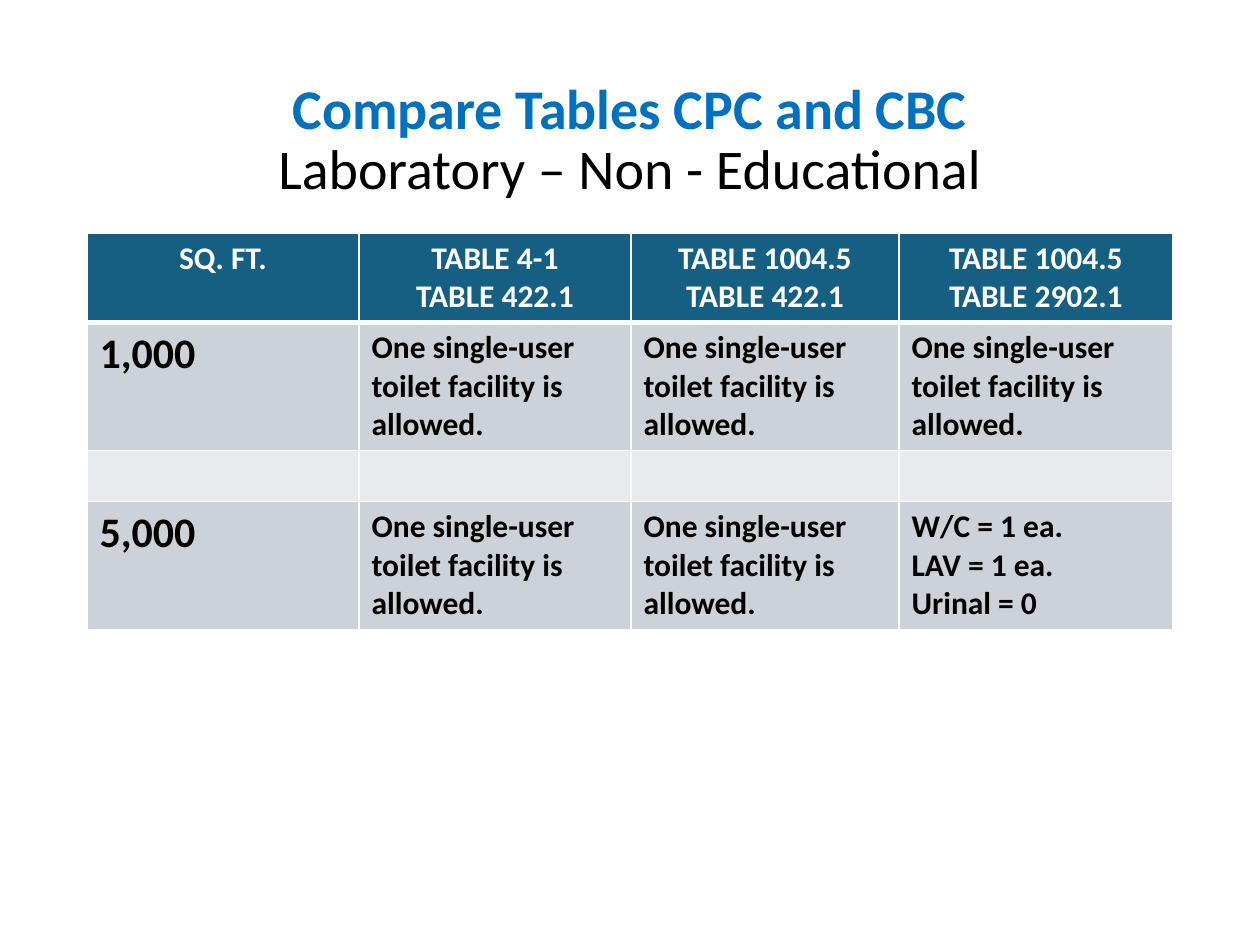
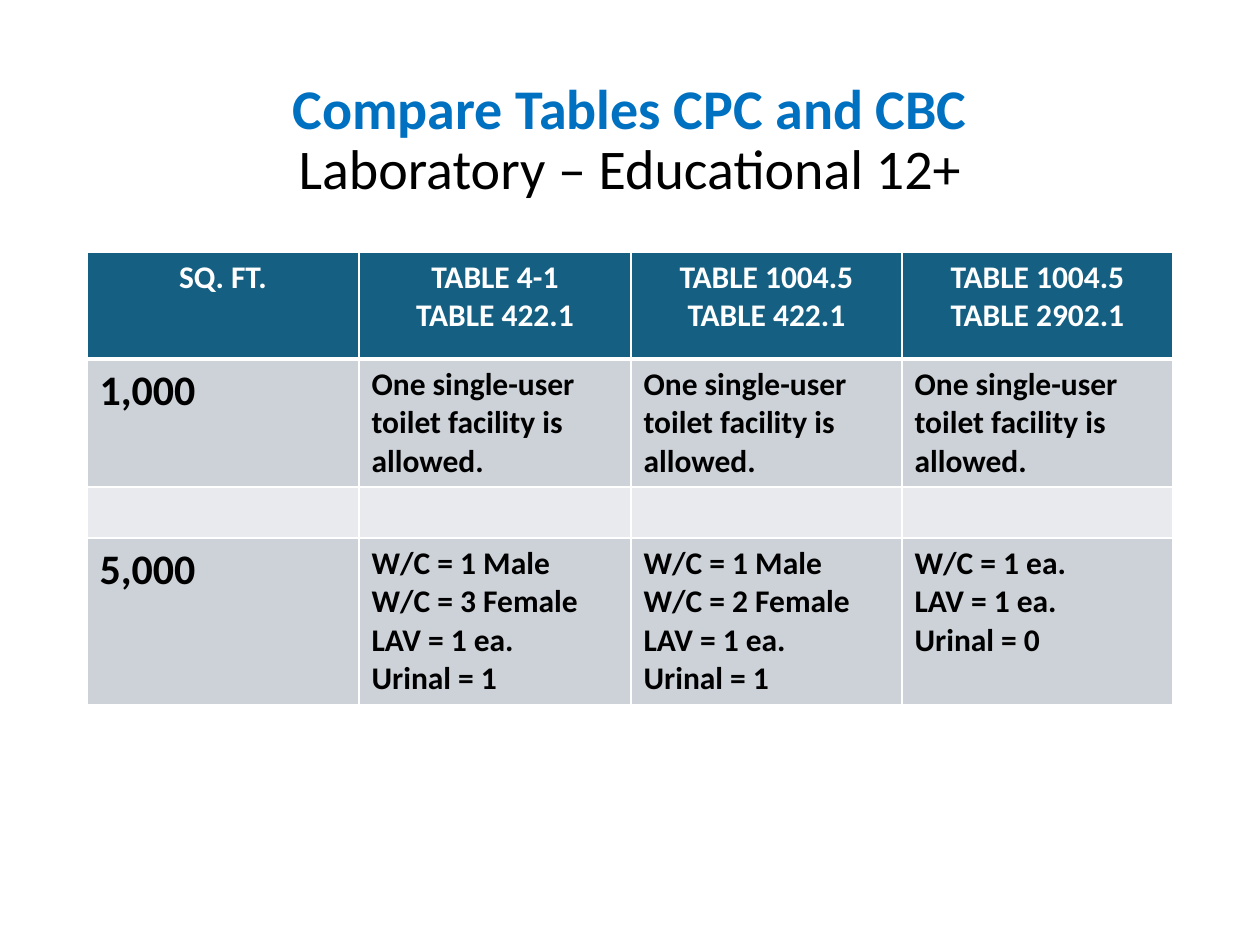
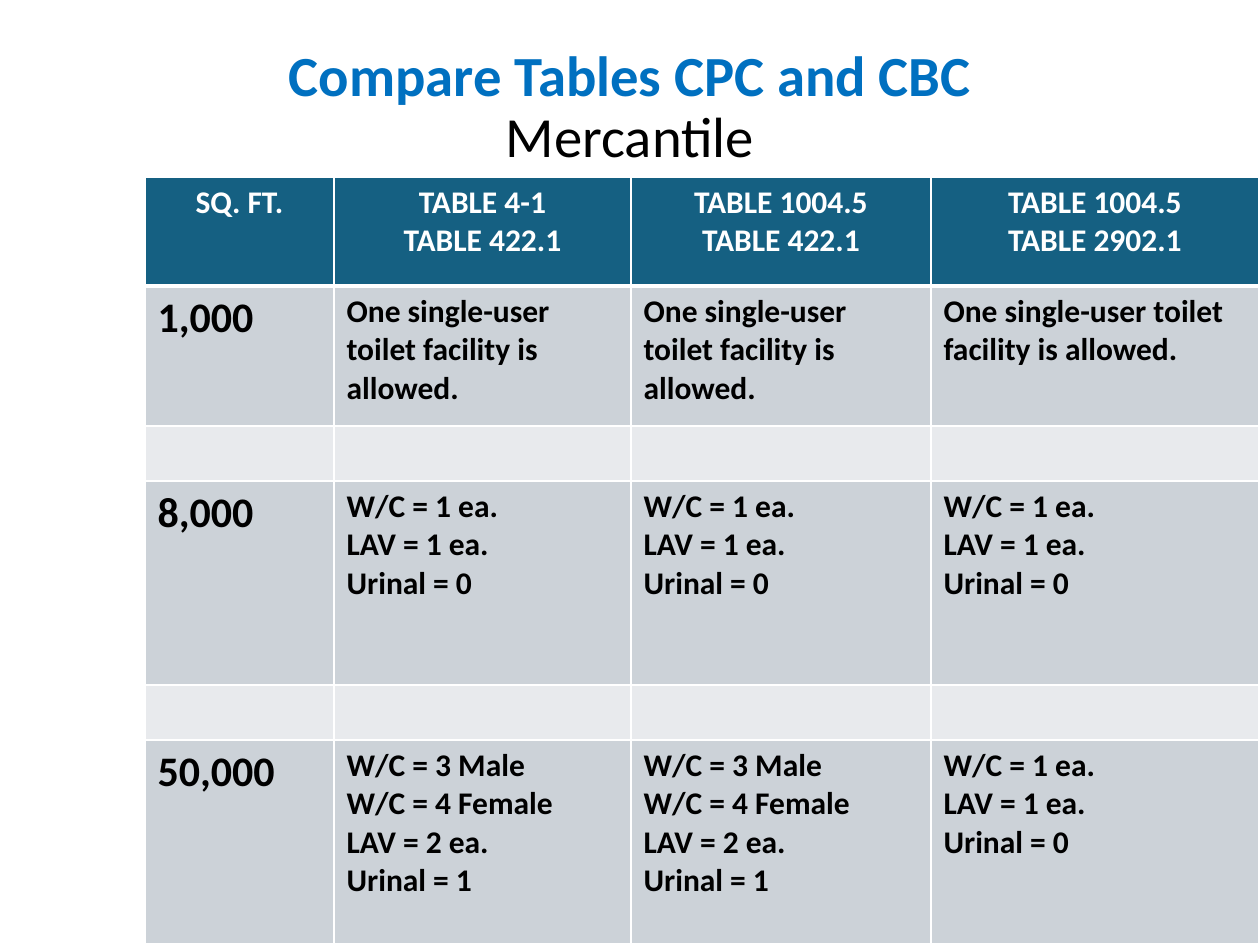
from dataclasses import dataclass

from lxml.etree import SubElement
from pptx import Presentation
from pptx.dml.color import RGBColor
from pptx.enum.text import MSO_ANCHOR as Anchor, MSO_AUTO_SIZE as AutoSize, PP_ALIGN as Align
from pptx.oxml.ns import qn
from pptx.util import Emu, Pt

PX_PER_INCH = 126
FONT = "Calibri"
WHITE = RGBColor(0xFF, 0xFF, 0xFF)
BLACK = RGBColor(0x00, 0x00, 0x00)
TITLE_BLUE = RGBColor(0x00, 0x70, 0xC0)
HEADER_TEAL = RGBColor(0x15, 0x60, 0x82)
BAND_DARK = RGBColor(0xCC, 0xD2, 0xD8)
BAND_LIGHT = RGBColor(0xE8, 0xEA, 0xED)

HEADING = "Compare Tables CPC and CBC"
HEADERS = ("SQ. FT.", "TABLE 4-1\nTABLE 422.1", "TABLE 1004.5\nTABLE 422.1", "TABLE 1004.5\nTABLE 2902.1")
SINGLE_USER = "One single-user toilet facility is allowed."
ONE_EACH = "W/C = 1 ea.\nLAV = 1 ea.\nUrinal = 0"
BLANK_ROW = ("",) * len(HEADERS)

TITLE_LEFT, TITLE_TOP, TITLE_WIDTH = 87, 50, 1086
BODY_SIZE, AREA_SIZE = 18, 24
THIN, THICK = 1, 3


@dataclass(frozen=True)
class Comparison:
    occupancy: str
    title_height: int
    title_size: float
    left: int
    top: int
    columns: tuple[int, ...]
    heights: tuple[int, ...]
    requirements: tuple[tuple[str, ...], ...]


def fixtures(male: int, female: int, lavatories: int) -> str:
    return f"W/C = {male} Male\nW/C = {female} Female\nLAV = {lavatories} ea.\nUrinal = 1"


SMALL_AREA = ("1,000", *(SINGLE_USER,) * 3)

COMPARISONS = (
    Comparison(
        "Laboratory – Non - Educational", 183, 32, 87, 233,
        (272, 272, 268, 274), (89, 128, 51, 128),
        (SMALL_AREA, BLANK_ROW, ("5,000", SINGLE_USER, SINGLE_USER, ONE_EACH)),
    ),
    Comparison(
        "Laboratory – Educational 12+", 183, 32, 87, 252,
        (272, 272, 271, 271), (107, 128, 51, 166),
        (SMALL_AREA, BLANK_ROW, ("5,000", fixtures(1, 3, 1), fixtures(1, 2, 1), ONE_EACH)),
    ),
    Comparison(
        "Mercantile", 117, 32.4, 145, 177,
        (189, 297, 300, 328), (109, 140, 55, 204, 55, 204),
        (
            SMALL_AREA,
            BLANK_ROW,
            ("8,000", *(ONE_EACH,) * 3),
            BLANK_ROW,
            ("50,000", fixtures(3, 4, 2), fixtures(3, 4, 2), ONE_EACH),
        ),
    ),
)


def px(length: int) -> Emu:
    return Emu(round(length * 914400 / PX_PER_INCH))


def apply(target, values: dict) -> None:
    for name, value in values.items():
        setattr(target, name, value)


def style_font(font, size: float, color: RGBColor, bold: bool) -> None:
    apply(font, {"name": FONT, "size": Pt(size), "bold": bold})
    font.color.rgb = color


def draw_title(slide, comparison: Comparison) -> None:
    title = slide.shapes.title
    apply(title, {
        "left": px(TITLE_LEFT),
        "top": px(TITLE_TOP),
        "width": px(TITLE_WIDTH),
        "height": px(comparison.title_height),
    })
    apply(title.text_frame, {
        "auto_size": AutoSize.NONE,
        "word_wrap": True,
        "vertical_anchor": Anchor.MIDDLE,
    })
    paragraph = title.text_frame.paragraphs[0]
    apply(paragraph, {"alignment": Align.CENTER, "line_spacing": 0.9})
    heading = paragraph.add_run()
    heading.text = HEADING
    style_font(heading.font, comparison.title_size, TITLE_BLUE, True)
    paragraph.add_line_break()
    occupancy = paragraph.add_run()
    occupancy.text = comparison.occupancy
    style_font(occupancy.font, comparison.title_size, BLACK, False)


def draw_borders(cell, top: int, bottom: int) -> None:
    properties = cell._tc.get_or_add_tcPr()
    for side, points in {"lnL": THIN, "lnR": THIN, "lnT": top, "lnB": bottom}.items():
        line = SubElement(properties, qn(f"a:{side}"), w=str(Pt(points)))
        fill = SubElement(line, qn("a:solidFill"))
        SubElement(fill, qn("a:srgbClr"), val=str(WHITE))


def fill_cell(cell, text: str, row: int, column: int) -> None:
    is_header = row == 0
    draw_borders(cell, THICK if row == 1 else THIN, THICK if is_header else THIN)
    cell.fill.solid()
    cell.fill.fore_color.rgb = HEADER_TEAL if is_header else BAND_DARK if row % 2 else BAND_LIGHT
    cell.text = text
    size = AREA_SIZE if column == 0 and text and not is_header else BODY_SIZE
    for paragraph in cell.text_frame.paragraphs:
        paragraph.alignment = Align.CENTER if is_header else Align.LEFT
        style_font(paragraph.font, size, WHITE if is_header else BLACK, True)
        for run in paragraph.runs:
            style_font(run.font, size, WHITE if is_header else BLACK, True)


def draw_requirements(slide, comparison: Comparison) -> None:
    rows = (HEADERS, *comparison.requirements)
    table = slide.shapes.add_table(
        len(rows), len(HEADERS), px(comparison.left), px(comparison.top),
        px(sum(comparison.columns)), px(sum(comparison.heights)),
    ).table
    for column, width in zip(table.columns, comparison.columns):
        column.width = px(width)
    for row, height in zip(table.rows, comparison.heights):
        row.height = px(height)
    for row_index, texts in enumerate(rows):
        for column_index, text in enumerate(texts):
            fill_cell(table.cell(row_index, column_index), text, row_index, column_index)


def main() -> None:
    deck = Presentation()
    apply(deck, {"slide_width": px(1260), "slide_height": px(945)})
    title_only = deck.slide_layouts.get_by_name("Title Only")
    for comparison in COMPARISONS:
        slide = deck.slides.add_slide(title_only)
        draw_title(slide, comparison)
        draw_requirements(slide, comparison)
    deck.save("out.pptx")


if __name__ == "__main__":
    main()
